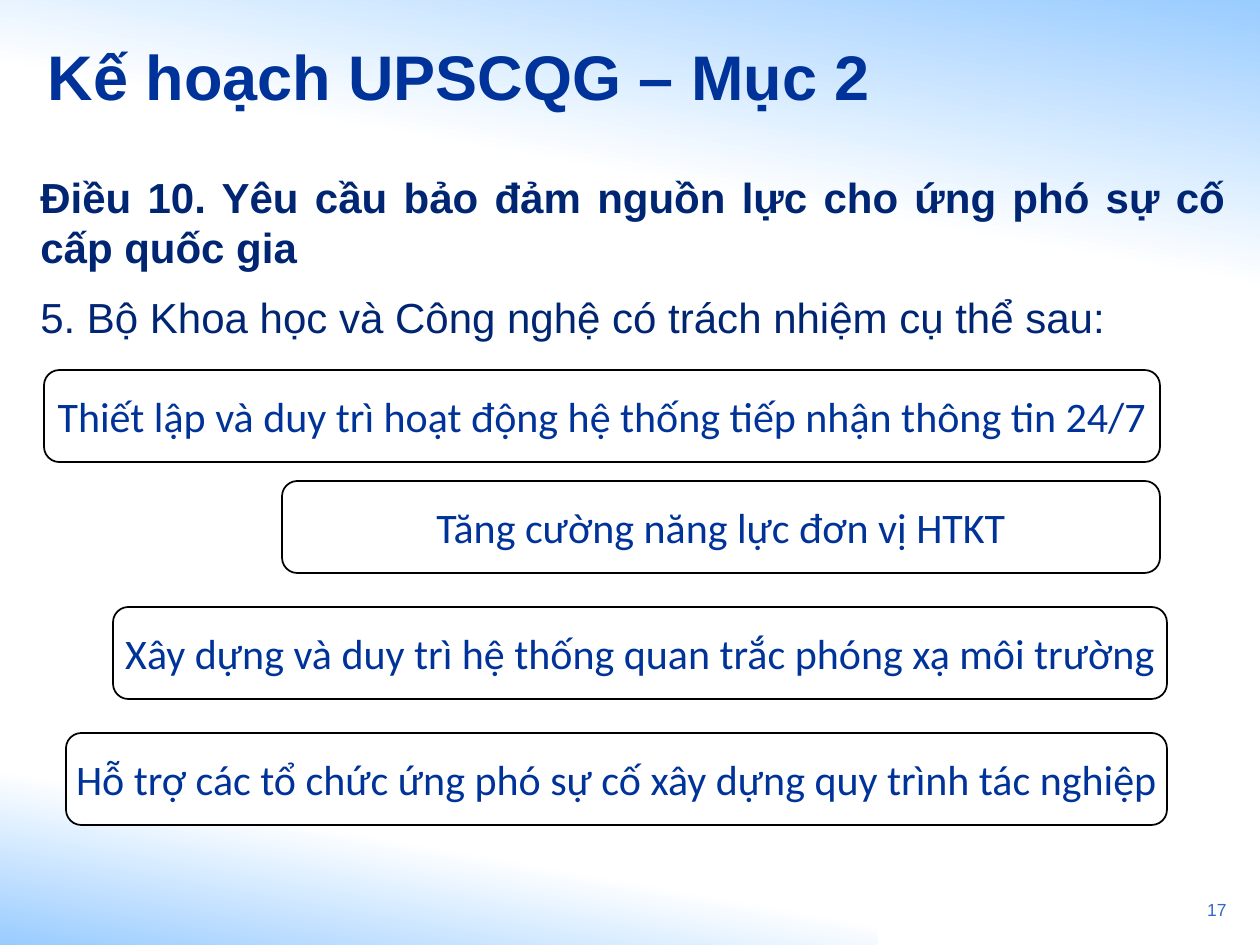
"""Build the slide on the Ministry's duties in national incident response."""
from pptx import Presentation
from pptx import util as u
from pptx.dml.color import RGBColor
from pptx.enum import shapes, text

EMU_PER_PX = 914400 / 126
NAVY = RGBColor(0x00, 0x33, 0x99)
DEEP_NAVY = RGBColor(0x00, 0x26, 0x73)
BLUE = RGBColor(0x33, 0x66, 0xCC)
SKY = RGBColor(0x99, 0xCC, 0xFF)
WHITE = RGBColor(0xFF, 0xFF, 0xFF)
BLACK = RGBColor(0x00, 0x00, 0x00)

BOX_HEIGHT = 92
DUTIES = [
    (44, 370, 1116, "Thiết lập và duy trì hoạt động hệ thống tiếp nhận thông tin 24/7"),
    (282, 481, 878, "Tăng cường năng lực đơn vị HTKT"),
    (113, 607, 1054, "Xây dựng và duy trì hệ thống quan trắc phóng xạ môi trường"),
    (66, 733, 1101, "Hỗ trợ các tổ chức ứng phó sự cố xây dựng quy trình tác nghiệp"),
]


def px(length):
    return u.Emu(round(length * EMU_PER_PX))


def assign(target, values):
    for name, value in values.items():
        setattr(target, name, value)


class Deck:
    """Holds the presentation style and the current slide."""

    heading_font = "Arial"
    box_font = "Calibri"

    def __init__(self, width, height):
        self.show = Presentation()
        assign(self.show, {"slide_width": px(width), "slide_height": px(height)})
        self.slide = self.show.slides.add_slide(self.show.slide_layouts[5])

    def wording(self, paragraph, words, color, font, align, **spacing):
        paragraph.text = words
        assign(paragraph, {"alignment": align, **spacing})
        assign(paragraph.font, font)
        paragraph.font.color.rgb = color

    def shape(self, kind, *box):
        item = self.slide.shapes.add_shape(kind, *map(px, box))
        item.shadow.inherit = False
        return item

    def glow(self, box, angle, white_at):
        band = self.shape(shapes.MSO_SHAPE.RECTANGLE, *box)
        band.line.fill.background()
        band.fill.gradient()
        band.fill.gradient_angle = angle
        for stop, position, color in zip(band.fill.gradient_stops, (0, white_at), (SKY, WHITE)):
            stop.position = position
            stop.color.rgb = color

    def title(self, box, words):
        heading = self.slide.shapes.title
        self.slide.shapes._spTree.append(heading._element)
        assign(heading, dict(zip(("left", "top", "width", "height"), map(px, box))))
        assign(heading.text_frame, {"vertical_anchor": text.MSO_ANCHOR.MIDDLE,
                                    "word_wrap": True,
                                    "auto_size": text.MSO_AUTO_SIZE.NONE})
        font = {"name": self.heading_font, "size": u.Pt(36), "bold": True}
        self.wording(heading.text_frame.paragraphs[0], words, NAVY, font, text.PP_ALIGN.LEFT)

    def text_box(self, box, lines, size, color, align):
        frame = self.slide.shapes.add_textbox(*map(px, box)).text_frame
        frame.word_wrap = True
        for number, (words, bold, spacing) in enumerate(lines):
            paragraph = frame.add_paragraph() if number else frame.paragraphs[0]
            font = {"name": self.heading_font, "size": u.Pt(size), "bold": bold}
            self.wording(paragraph, words, color, font, align, **spacing)

    def duty(self, left, top, width, words):
        panel = self.shape(shapes.MSO_SHAPE.ROUNDED_RECTANGLE, left, top, width, BOX_HEIGHT)
        panel.fill.solid()
        panel.fill.fore_color.rgb = WHITE
        panel.line.color.rgb = BLACK
        panel.line.width = u.Pt(1)
        assign(panel.text_frame, {"word_wrap": False, "vertical_anchor": text.MSO_ANCHOR.MIDDLE})
        font = {"name": self.box_font, "size": u.Pt(24)}
        self.wording(panel.text_frame.paragraphs[0], words, NAVY, font, text.PP_ALIGN.CENTER)


def main():
    deck = Deck(1260, 945)
    deck.glow((0, 731, 878, 214), 80, 0.48)
    deck.glow((0, 0, 1260, 294), 260, 0.56)
    deck.text_box((1168, 893, 71, 40), [("17", False, {})], 10, BLUE, text.PP_ALIGN.RIGHT)
    deck.title((35, 16, 932, 118), "Kế hoạch UPSCQG – Mục 2")
    article = [
        ("Điều 10. Yêu cầu bảo đảm nguồn lực cho ứng phó sự cố cấp quốc gia",
         True, {"space_after": u.Pt(6)}),
        ("5. Bộ Khoa học và Công nghệ có trách nhiệm cụ thể sau:",
         False, {"space_before": u.Pt(5)}),
    ]
    deck.text_box((28, 165, 1210, 714), article, 24, DEEP_NAVY, text.PP_ALIGN.JUSTIFY)
    for duty in DUTIES:
        deck.duty(*duty)
    deck.show.save("out.pptx")


if __name__ == "__main__":
    main()
